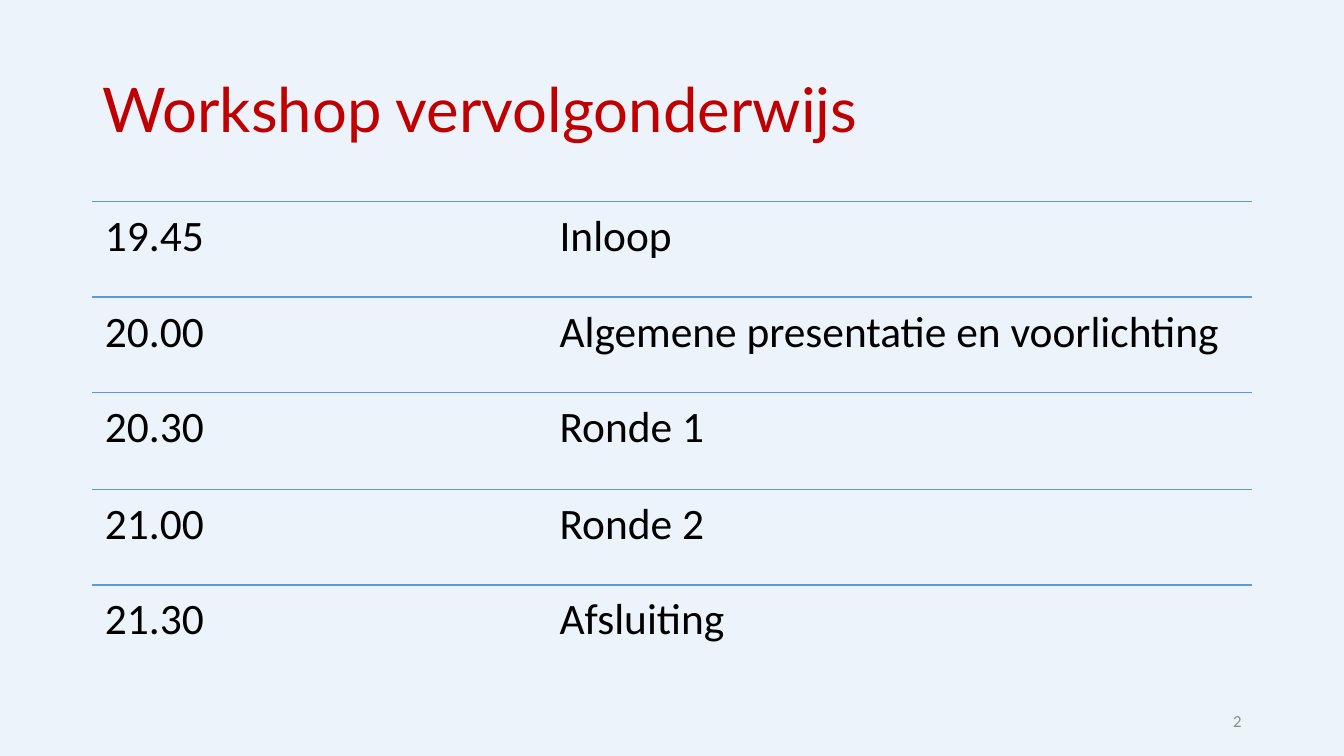
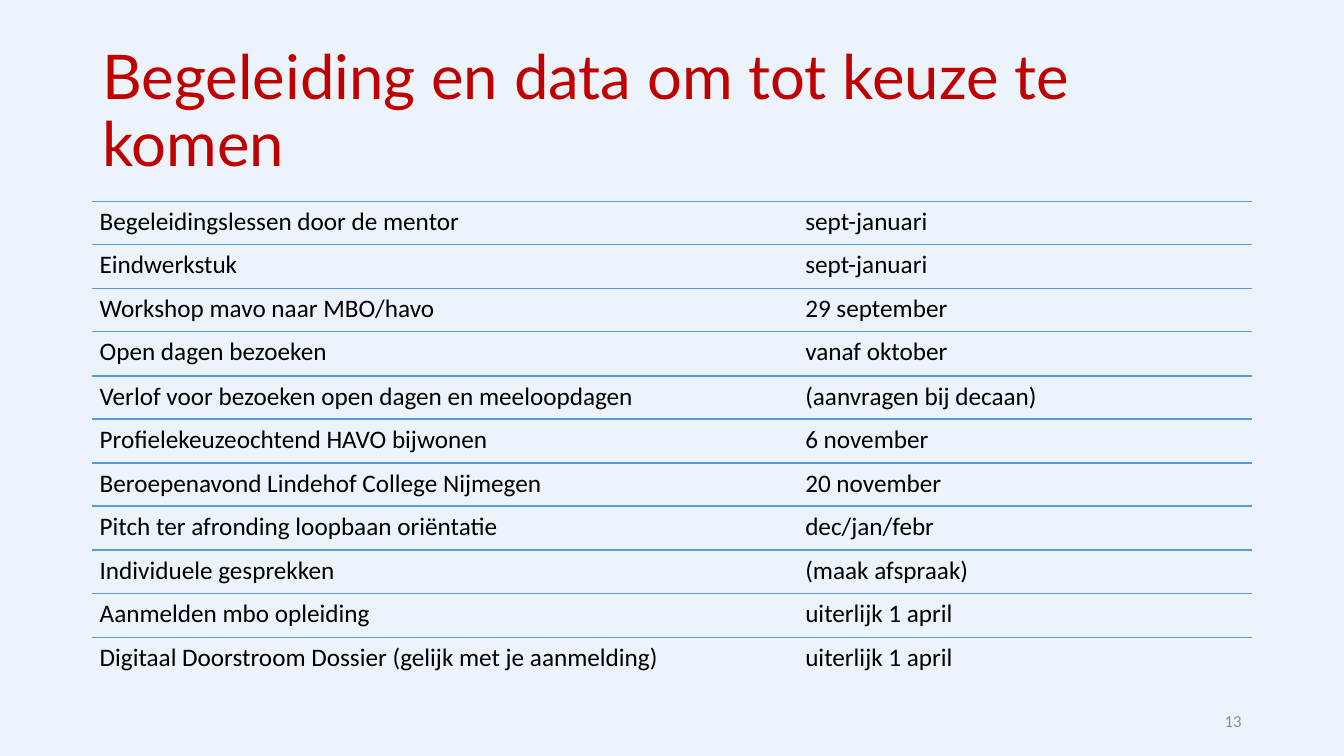
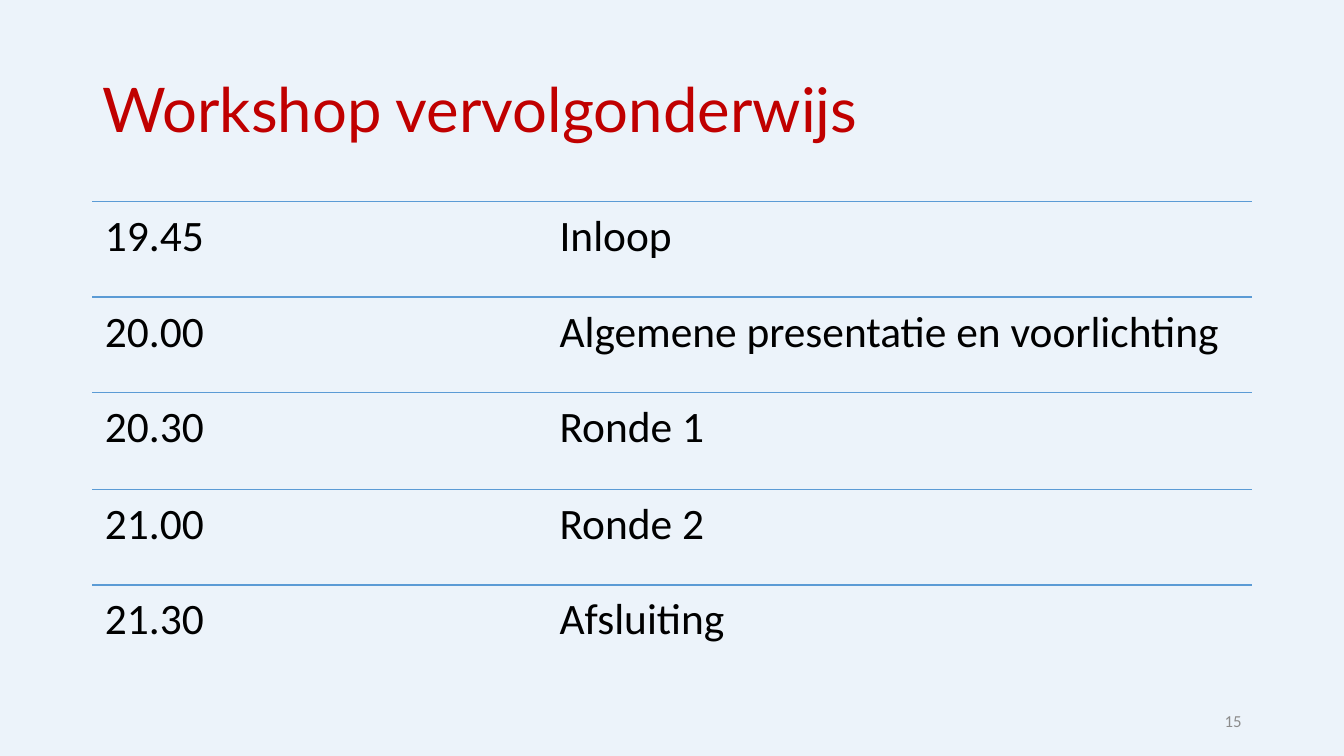
from dataclasses import dataclass

from lxml import etree
from pptx import Presentation
from pptx import util as u
from pptx.dml.color import RGBColor
from pptx.enum import shapes, text
from pptx.oxml import ns


# Theme: colours, fonts and type sizes
@dataclass(frozen=True)
class Theme:
    background: str = "ECF3FA"
    title: str = "C00000"
    body: str = "000000"
    rule: str = "5B9BD5"
    number: str = "8C8C8C"
    title_font: str = "Lato"
    body_font: str = "Calibri"
    title_size: int = 44
    agenda_size: int = 31
    planning_size: int = 18
    number_size: int = 12


THEME = Theme()

# Shared grid, in px (96 to the inch)
SLIDE_W, SLIDE_H = 1280, 720
LEFT, WIDTH = 88, 1104
LIST_TOP, LIST_H = 192, 456


# Content
@dataclass(frozen=True)
class ListStyle:
    size: int
    inset: int
    tab: int


AGENDA_STYLE = ListStyle(THEME.agenda_size, inset=12, tab=433)
PLANNING_STYLE = ListStyle(THEME.planning_size, inset=7, tab=672)

AGENDA = [
    ("19.45", "Inloop"),
    ("20.00", "Algemene presentatie en voorlichting"),
    ("20.30", "Ronde 1"),
    ("21.00", "Ronde 2"),
    ("21.30", "Afsluiting"),
]
PLANNING = [
    ("Begeleidingslessen door de mentor", "sept-januari"),
    ("Eindwerkstuk", "sept-januari"),
    ("Workshop mavo naar MBO/havo", "29 september"),
    ("Open dagen bezoeken", "vanaf oktober"),
    ("Verlof voor bezoeken open dagen en meeloopdagen", "(aanvragen bij decaan)"),
    ("Profielekeuzeochtend HAVO bijwonen", "6 november"),
    ("Beroepenavond Lindehof College Nijmegen", "20 november"),
    ("Pitch ter afronding loopbaan oriëntatie", "dec/jan/febr"),
    ("Individuele gesprekken", "(maak afspraak)"),
    ("Aanmelden mbo opleiding", "uiterlijk 1 april"),
    ("Digitaal Doorstroom Dossier (gelijk met je aanmelding)", "uiterlijk 1 april"),
]
SLIDES = [
    ("Workshop vervolgonderwijs", AGENDA, AGENDA_STYLE, 2),
    ("Begeleiding en data om tot keuze te komen", PLANNING, PLANNING_STYLE, 13),
    ("Workshop vervolgonderwijs", AGENDA, AGENDA_STYLE, 15),
]


def px(length):
    return u.Emu(length * 9525)


# Elements
def add_text(slide, box, wording, size, color, font=THEME.body_font,
             anchor=text.MSO_ANCHOR.MIDDLE, spacing=1.0):
    frame = slide.shapes.add_textbox(*map(px, box)).text_frame
    frame.word_wrap = True
    frame.vertical_anchor = anchor
    frame.text = wording
    paragraph = frame.paragraphs[0]
    paragraph.line_spacing = spacing
    letters = paragraph.runs[0].font
    letters.name, letters.size = font, u.Pt(size)
    letters.color.rgb = RGBColor.from_string(color)
    return frame


def add_rule(slide, y):
    rule = slide.shapes.add_connector(
        shapes.MSO_CONNECTOR.STRAIGHT, px(LEFT), px(y), px(LEFT + WIDTH), px(y))
    rule.line.color.rgb = RGBColor.from_string(THEME.rule)
    rule.line.width = u.Pt(1)
    etree.SubElement(rule._element.spPr, ns.qn("a:effectLst"))


def set_tab(paragraph, position):
    stops = etree.SubElement(paragraph._p.get_or_add_pPr(), ns.qn("a:tabLst"))
    etree.SubElement(stops, ns.qn("a:tab"), pos=str(px(position)), algn="l")


def add_row(slide, top, height, cells, style):
    add_rule(slide, top)
    frame = add_text(slide, (LEFT, top, WIDTH, height), "\t".join(cells),
                     style.size, THEME.body,
                     anchor=text.MSO_ANCHOR.TOP, spacing=0.9)
    frame.margin_left = frame.margin_right = px(style.inset)
    frame.margin_top = frame.margin_bottom = px(style.inset)
    set_tab(frame.paragraphs[0], style.tab)


def add_list(slide, rows, style):
    edges = [LIST_TOP + round(LIST_H * i / len(rows)) for i in range(len(rows) + 1)]
    for cells, top, bottom in zip(rows, edges, edges[1:]):
        add_row(slide, top, bottom - top, cells, style)


def add_title(slide, wording):
    add_text(slide, (LEFT, 38, WIDTH, 139), wording, THEME.title_size,
             THEME.title, THEME.title_font, spacing=0.9)


def add_number(slide, number):
    frame = add_text(slide, (904, 667, 288, 38), str(number),
                     THEME.number_size, THEME.number)
    frame.paragraphs[0].alignment = text.PP_ALIGN.RIGHT


def main():
    deck = Presentation()
    deck.slide_width, deck.slide_height = px(SLIDE_W), px(SLIDE_H)
    backdrop = deck.slide_master.background.fill
    backdrop.solid()
    backdrop.fore_color.rgb = RGBColor.from_string(THEME.background)
    for title, rows, style, number in SLIDES:
        slide = deck.slides.add_slide(deck.slide_layouts[6])
        add_title(slide, title)
        add_list(slide, rows, style)
        add_number(slide, number)
    deck.save("out.pptx")


if __name__ == "__main__":
    main()
